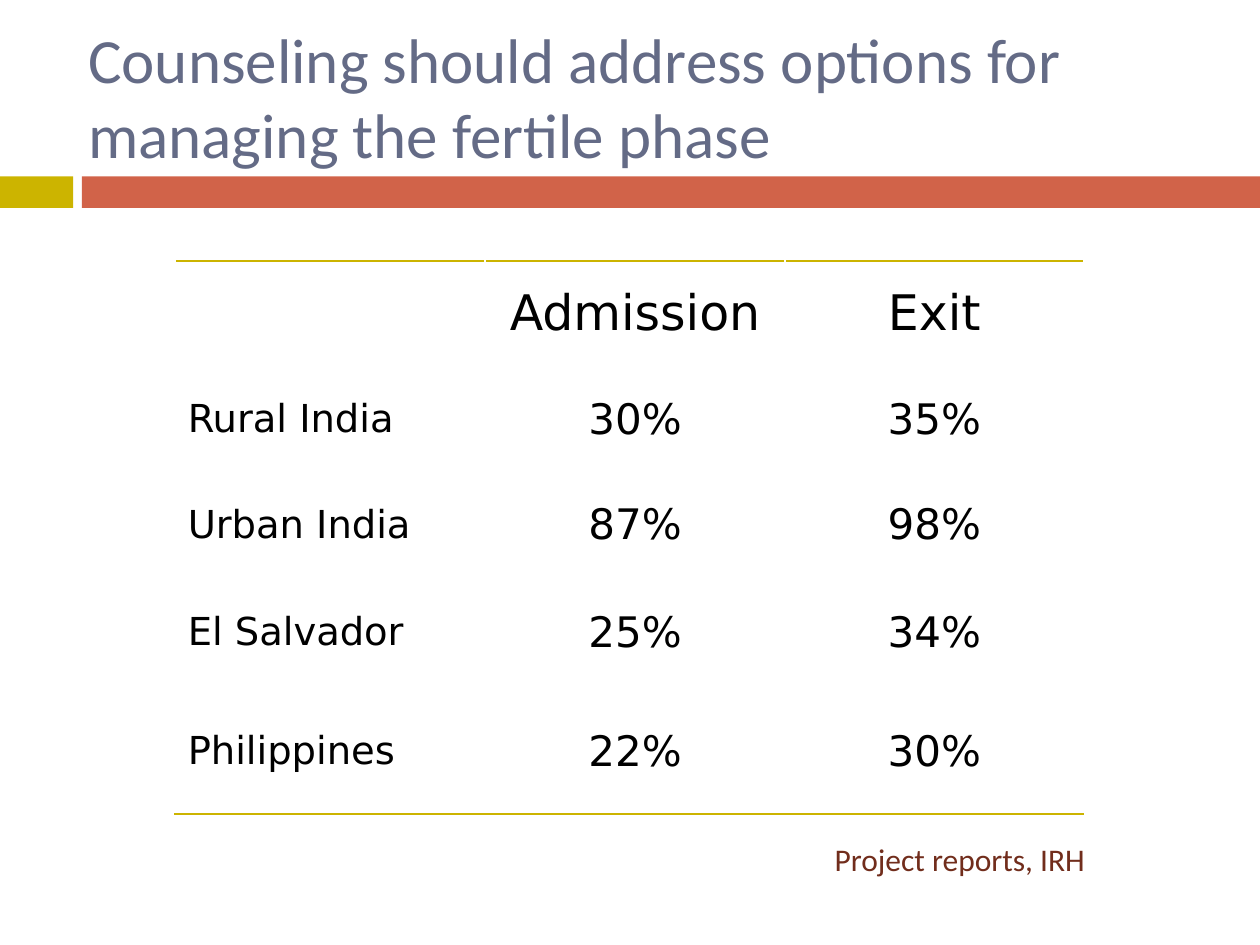
from lxml import etree
from pptx import Presentation
from pptx.dml.color import RGBColor
from pptx.enum.shapes import MSO_SHAPE
from pptx.enum.text import MSO_ANCHOR, MSO_AUTO_SIZE, PP_ALIGN
from pptx.oxml.ns import qn
from pptx.util import Inches, Pt

RECTANGLE = MSO_SHAPE.RECTANGLE
MIDDLE = MSO_ANCHOR.MIDDLE
LEFT, CENTER, RIGHT = PP_ALIGN.LEFT, PP_ALIGN.CENTER, PP_ALIGN.RIGHT
NO_FIT, GROW = MSO_AUTO_SIZE.NONE, MSO_AUTO_SIZE.SHAPE_TO_FIT_TEXT
TITLE_ONLY = 5
COLORS = {"gold": "CCB400", "brick": "D16349", "slate": "646B86",
          "rust": "712D1C", "black": "000000"}
TEXT_FONT, TABLE_FONT = "Calibri", "DejaVu Sans"
HEADER_SIZE, LABEL_SIZE, VALUE_SIZE = 28, 22, 24

ROWS = [
    ("", "Admission", "Exit"),
    ("Rural India", "30%", "35%"),
    ("Urban India", "87%", "98%"),
    ("El Salvador", "25%", "34%"),
    ("Philippines", "22%", "30%"),
]


class SlideBuilder:
    """Places elements on a grid of 100 columns by 75 rows."""

    def __init__(self):
        self.presentation = Presentation()
        self.presentation.slide_width = Inches(10)
        self.presentation.slide_height = Inches(7.5)
        self.column = self.presentation.slide_width / 100
        self.row = self.presentation.slide_height / 75
        layout = self.presentation.slide_layouts[TITLE_ONLY]
        self.slide = self.presentation.slides.add_slide(layout)

    def box(self, left, top, width, height):
        return (round(left * self.column), round(top * self.row),
                round(width * self.column), round(height * self.row))

    def add_text(self, paragraph, text, size, color, font=TEXT_FONT, align=LEFT):
        paragraph.alignment = align
        run = paragraph.add_run()
        run.text = text
        run.font.size = Pt(size)
        run.font.name = font
        run.font.color.rgb = RGBColor.from_string(COLORS[color])

    def bar(self, color, *area):
        shape = self.slide.shapes.add_shape(RECTANGLE, *self.box(*area))
        shape.shadow.inherit = False
        shape.fill.solid()
        shape.fill.fore_color.rgb = RGBColor.from_string(COLORS[color])
        shape.line.fill.background()

    def title(self, text, *area):
        shape = self.slide.shapes.title
        shape.left, shape.top, shape.width, shape.height = self.box(*area)
        frame = shape.text_frame
        frame.word_wrap = True
        frame.auto_size = NO_FIT
        frame.vertical_anchor = MIDDLE
        self.add_text(frame.paragraphs[0], text, 36, "slate")

    def note(self, text, *area):
        frame = self.slide.shapes.add_textbox(*self.box(*area)).text_frame
        frame.word_wrap = True
        frame.auto_size = GROW
        self.add_text(frame.paragraphs[0], text, 18, "rust", align=RIGHT)

    def border(self, cell, side):
        properties = cell._tc.get_or_add_tcPr()
        line = etree.Element(qn(f"a:{side}"), w=str(Pt(1)))
        fill = etree.SubElement(line, qn("a:solidFill"))
        etree.SubElement(fill, qn("a:srgbClr"), val=COLORS["gold"])
        properties.insert(0, line)

    def table(self, rows, left, top, widths, heights):
        area = self.box(left, top, sum(widths), sum(heights))
        table = self.slide.shapes.add_table(len(rows), len(widths), *area).table
        table.first_row = table.horz_banding = False
        for column, width in zip(table.columns, widths):
            column.width = round(width * self.column)
        for row, height in zip(table.rows, heights):
            row.height = round(height * self.row)
        for row_index, row in enumerate(rows):
            for column_index, text in enumerate(row):
                cell = table.cell(row_index, column_index)
                cell.fill.background()
                cell.vertical_anchor = MIDDLE
                if row_index == 0:
                    size = HEADER_SIZE
                    self.border(cell, "lnT")
                else:
                    size = VALUE_SIZE if column_index else LABEL_SIZE
                if row_index == len(rows) - 1:
                    self.border(cell, "lnB")
                if text:
                    paragraph = cell.text_frame.paragraphs[0]
                    paragraph.space_before = Pt(round(size * 0.2, 1))
                    self.add_text(paragraph, text, size, "black", TABLE_FONT,
                                  CENTER if column_index else LEFT)


def main():
    builder = SlideBuilder()
    # Heading with its two-colour band
    builder.bar("gold", 0, 14, 5.8, 2.5)
    builder.bar("brick", 6.5, 14, 93.5, 2.5)
    builder.title("Counseling should address options for managing the fertile phase",
                  6, 2.6, 85.8, 10)
    # Results by country
    builder.table(ROWS, 13.9, 20.7, widths=(24.6, 23.8, 23.7),
                  heights=(8.3, 8.6, 8.1, 9, 9.9))
    # Source note
    builder.note("Project reports, IRH", 52.9, 66.2, 34.2, 4)
    builder.presentation.save("out.pptx")


if __name__ == "__main__":
    main()
